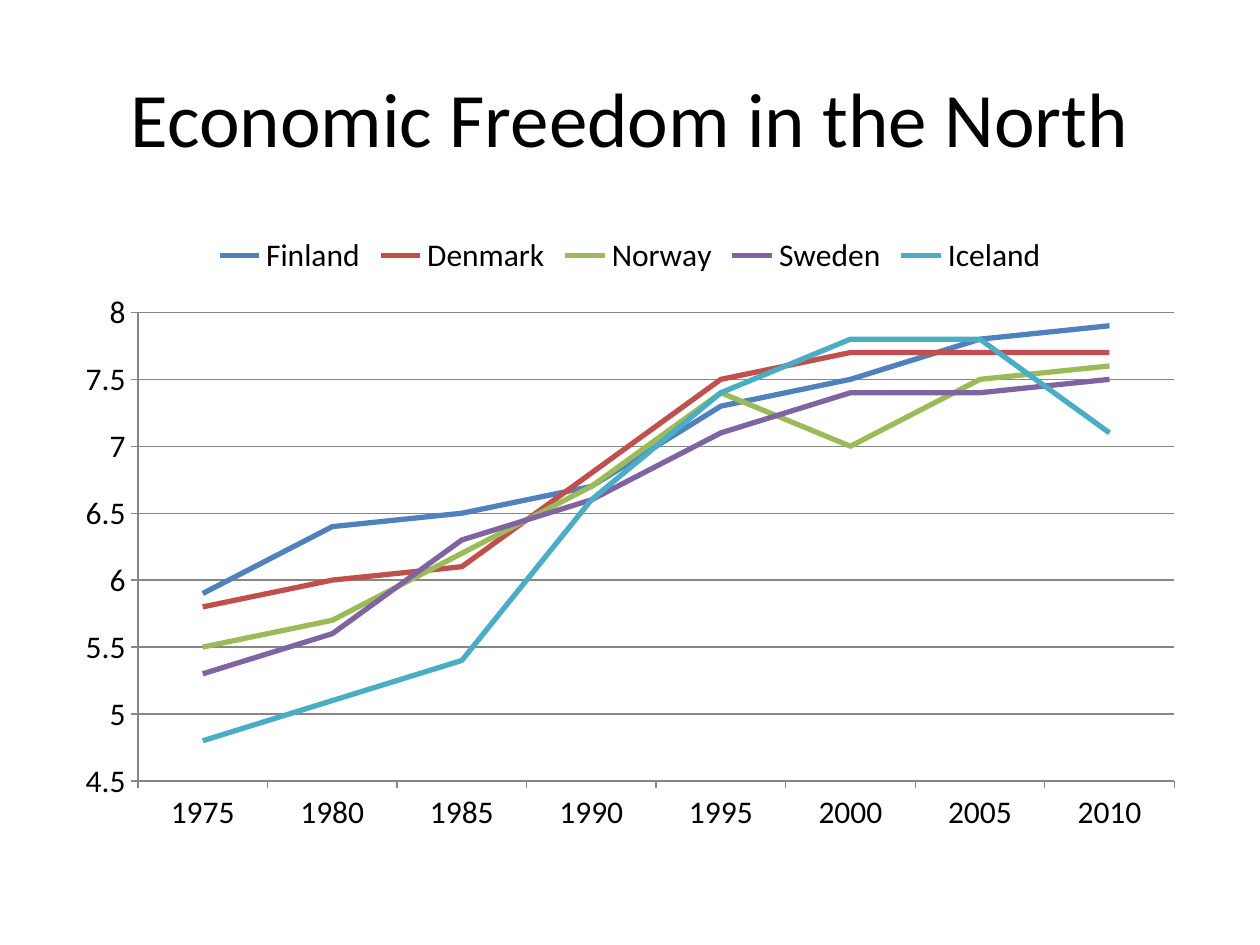
"""Build a slide with a line chart of economic freedom in the Nordic countries."""
import pptx
import pptx.chart.data
import pptx.dml.color
import pptx.enum.chart
import pptx.enum.text
import pptx.oxml.ns
import pptx.util

THEME = {
    "font": "Calibri",
    "ink": "000000",
    "grid": "868686",
    "paper": "FFFFFF",
    "title": 44,
    "label": 18,
    "line": 3,
    "rule": 0.75,
}
DATA = {
    "Finland": ("4F81BD", (5.9, 6.4, 6.5, 6.7, 7.3, 7.5, 7.8, 7.9)),
    "Denmark": ("C0504D", (5.8, 6, 6.1, 6.8, 7.5, 7.7, 7.7, 7.7)),
    "Norway": ("9BBB59", (5.5, 5.7, 6.2, 6.7, 7.4, 7, 7.5, 7.6)),
    "Sweden": ("8064A2", (5.3, 5.6, 6.3, 6.6, 7.1, 7.4, 7.4, 7.5)),
    "Iceland": ("4BACC6", (4.8, 5.1, 5.4, 6.6, 7.4, 7.8, 7.8, 7.1)),
}
SCALE = 914400 / 126
rgb = pptx.dml.color.RGBColor.from_string
enum = pptx.enum.chart


def px(*nums):
    return [pptx.util.Emu(round(num * SCALE)) for num in nums]


def put(item, form):
    for name, value in form.items():
        setattr(item, name, value)


deck = pptx.Presentation()
deck.slide_width, deck.slide_height = px(1260, 945)
slide = deck.slides.add_slide(deck.slide_layouts[6])
slide.background.fill.solid()
slide.background.fill.fore_color.rgb = rgb(THEME["paper"])

frame = slide.shapes.add_textbox(*px(63, 38, 1134, 157)).text_frame
put(frame, {"word_wrap": True, "vertical_anchor": pptx.enum.text.MSO_ANCHOR.MIDDLE})
para = frame.paragraphs[0]
put(para, {"text": "Economic Freedom in the North", "alignment": pptx.enum.text.PP_ALIGN.CENTER})

data = pptx.chart.data.CategoryChartData()
data.categories = [str(year) for year in range(1975, 2011, 5)]
for name, (tint, vals) in DATA.items():
    data.add_series(name, vals)
chart = slide.shapes.add_chart(enum.XL_CHART_TYPE.LINE, *px(63, 221, 1134, 623), data).chart
put(chart, {"has_title": False, "has_legend": True})
put(chart.legend, {"position": enum.XL_LEGEND_POSITION.TOP, "include_in_layout": False})

for font, size in ((para.runs[0].font, "title"), (chart.font, "label")):
    put(font, {"name": THEME["font"], "size": pptx.util.Pt(THEME[size])})
    font.color.rgb = rgb(THEME["ink"])

plot = chart.plots[0]
plot.vary_by_categories = False
lines = []
for row in plot.series:
    row.smooth = False
    row.marker.style = enum.XL_MARKER_STYLE.NONE
    lines.append((row.format.line, DATA[row.name][0], "line"))

years, score = chart.category_axis, chart.value_axis
for axis in (years, score):
    put(axis, {
        "major_tick_mark": enum.XL_TICK_MARK.OUTSIDE,
        "minor_tick_mark": enum.XL_TICK_MARK.NONE,
        "has_major_gridlines": axis is score,
    })
    lines.append((axis.format.line, THEME["grid"], "rule"))
put(score, {"minimum_scale": 4.5, "maximum_scale": 8, "major_unit": 0.5})
put(score.tick_labels, {"number_format": "General", "number_format_is_linked": False})
lines.append((score.major_gridlines.format.line, THEME["grid"], "rule"))

for line, tint, width in lines:
    line.color.rgb = rgb(tint)
    line.width = pptx.util.Pt(THEME[width])

for cross in chart.element.iter(pptx.oxml.ns.qn("c:crossBetween")):
    cross.set("val", "midCat")

deck.save("out.pptx")
